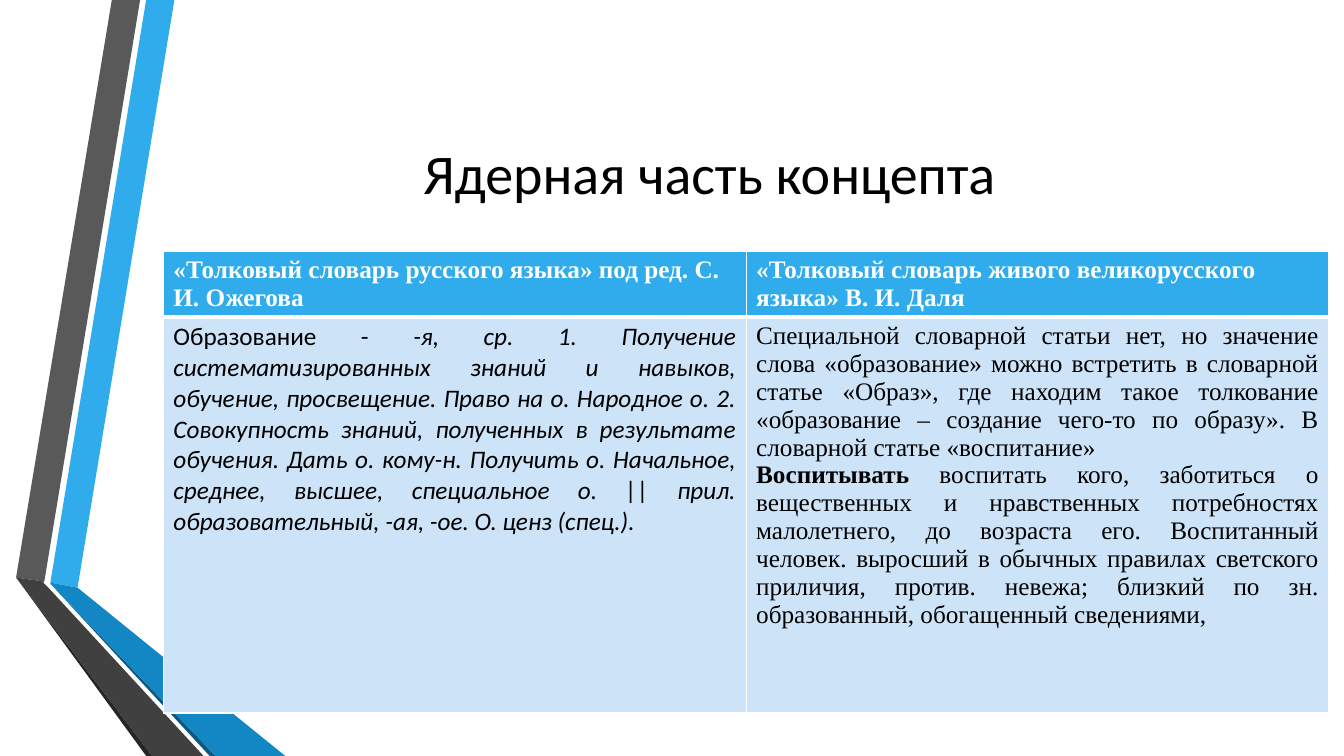
import pptx
import pptx.util
import pptx.dml.color
import pptx.enum.text
import pptx.oxml
import pptx.oxml.ns

WIDTH, HEIGHT = 13.33, 7.5
TITLE = "Ядерная часть концепта "
SERIF, SANS = "Times New Roman", "Calibri"
WHITE, BLACK, BLUE, PALE = "FFFFFF", "000000", "30ACEC", "CDE3F8"

RIBBONS = [
    (BLUE, [(50, 578), (77, 583), (173, 0), (145, 0)]),
    ("595959", [(139, 0), (111, 0), (16, 573), (44, 577)]),
    ("262626", [(16, 573), (145, 750), (151, 750)]),
    ("0C5A82", [(50, 579), (208, 750), (214, 750)]),
    ("1287C3", [(50, 579), (214, 750), (283, 750), (77, 583), (50, 578)]),
    ("404040", [(202, 750), (48, 583), (43, 578), (44, 577), (16, 573), (151, 750)]),
]

HEADINGS = [
    "«Толковый словарь русского языка» под ред. С. И. Ожегова",
    "«Толковый словарь живого великорусского языка» В. И. Даля",
]
ENTRIES = [
    (SANS, [[
        ("Образование - ", ""),
        ("-я, ср. 1. Получение систематизированных знаний и навыков, обучение, "
         "просвещение. Право на о. Народное о. 2. Совокупность знаний, полученных "
         "в результате обучения. Дать о. кому-н. Получить о. Начальное, среднее, "
         "высшее, специальное о. || прил. образовательный, -ая, -ое. "
         "О. ценз (спец.).", "italic"),
    ]]),
    (SERIF, [
        [("Специальной словарной статьи нет, но значение слова «образование» можно "
          "встретить в словарной статье «Образ», где находим такое толкование "
          "«образование – создание чего-то по образу». В словарной статье "
          "«воспитание» ", "")],
        [("Воспитывать", "bold"),
         (" воспитать кого, заботиться о вещественных и нравственных потребностях "
          "малолетнего, до возраста его. Воспитанный человек. выросший в обычных "
          "правилах светского приличия, против. невежа; близкий по зн. "
          "образованный, обогащенный сведениями,", "")],
    ]),
]
TABLE_LEFT, TABLE_TOP = 1.62, 2.49
COLUMN_WIDTH, ROW_HEIGHTS = 5.78, (0.65, 3.93)

inches = pptx.util.Inches
ALIGN = pptx.enum.text.PP_ALIGN


def color(value):
    return pptx.dml.color.RGBColor.from_string(value)


def set_font(font, name, size, value):
    font.name = name
    font.size = pptx.util.Pt(size)
    font.color.rgb = color(value)


def draw_ribbon(page, fill, points):
    builder = page.shapes.build_freeform(*points[0], scale=inches(0.01))
    builder.add_line_segments(points[1:], close=True)
    ribbon = builder.convert_to_shape()
    ribbon.shadow.inherit = False
    ribbon.fill.solid()
    ribbon.fill.fore_color.rgb = color(fill)
    ribbon.line.fill.background()


def style_cell(cell, fill, top, bottom):
    properties = cell._tc.get_or_add_tcPr()
    for side, points in zip("LRTB", (1, 1, top, bottom)):
        properties.append(pptx.oxml.parse_xml(
            f'<a:ln{side} {pptx.oxml.ns.nsdecls("a")} w="{pptx.util.Pt(points)}">'
            f'<a:solidFill><a:srgbClr val="{WHITE}"/></a:solidFill></a:ln{side}>'))
    cell.fill.solid()
    cell.fill.fore_color.rgb = color(fill)


def write_cell(cell, paragraphs, name, value, align):
    frame = cell.text_frame
    for index, spans in enumerate(paragraphs):
        para = frame.add_paragraph() if index else frame.paragraphs[0]
        para.alignment = align
        set_font(para.font, name, 18, value)
        for text, style in spans:
            span = para.add_run()
            span.text = text
            set_font(span.font, name, 18, value)
            span.font.bold = style == "bold"
            span.font.italic = style == "italic"


def add_title(page):
    title = page.shapes.title
    title.left, title.top = inches(1.62), inches(0.75)
    title.width, title.height = inches(10.96), inches(1.92)
    frame = title.text_frame
    frame.text = TITLE
    frame.vertical_anchor = pptx.enum.text.MSO_ANCHOR.MIDDLE
    para = frame.paragraphs[0]
    para.alignment = ALIGN.CENTER
    set_font(para.font, SANS, 40, BLACK)


def add_dictionary_table(page):
    table = page.shapes.add_table(
        len(ROW_HEIGHTS), len(HEADINGS), inches(TABLE_LEFT), inches(TABLE_TOP),
        inches(COLUMN_WIDTH * len(HEADINGS)), inches(sum(ROW_HEIGHTS))).table
    for row, height in zip(table.rows, ROW_HEIGHTS):
        row.height = inches(height)
    for index, (heading, (name, entry)) in enumerate(zip(HEADINGS, ENTRIES)):
        table.columns[index].width = inches(COLUMN_WIDTH)
        head, body = table.cell(0, index), table.cell(1, index)
        style_cell(head, BLUE, 1, 3)
        style_cell(body, PALE, 3, 1)
        write_cell(head, [[(heading, "bold")]], SERIF, WHITE, ALIGN.LEFT)
        write_cell(body, entry, name, BLACK, ALIGN.JUSTIFY)


def main():
    deck = pptx.Presentation()
    deck.slide_width, deck.slide_height = inches(WIDTH), inches(HEIGHT)
    page = deck.slides.add_slide(deck.slide_layouts[5])
    for fill, points in RIBBONS:
        draw_ribbon(page, fill, points)
    add_title(page)
    add_dictionary_table(page)
    deck.save("out.pptx")


if __name__ == "__main__":
    main()
